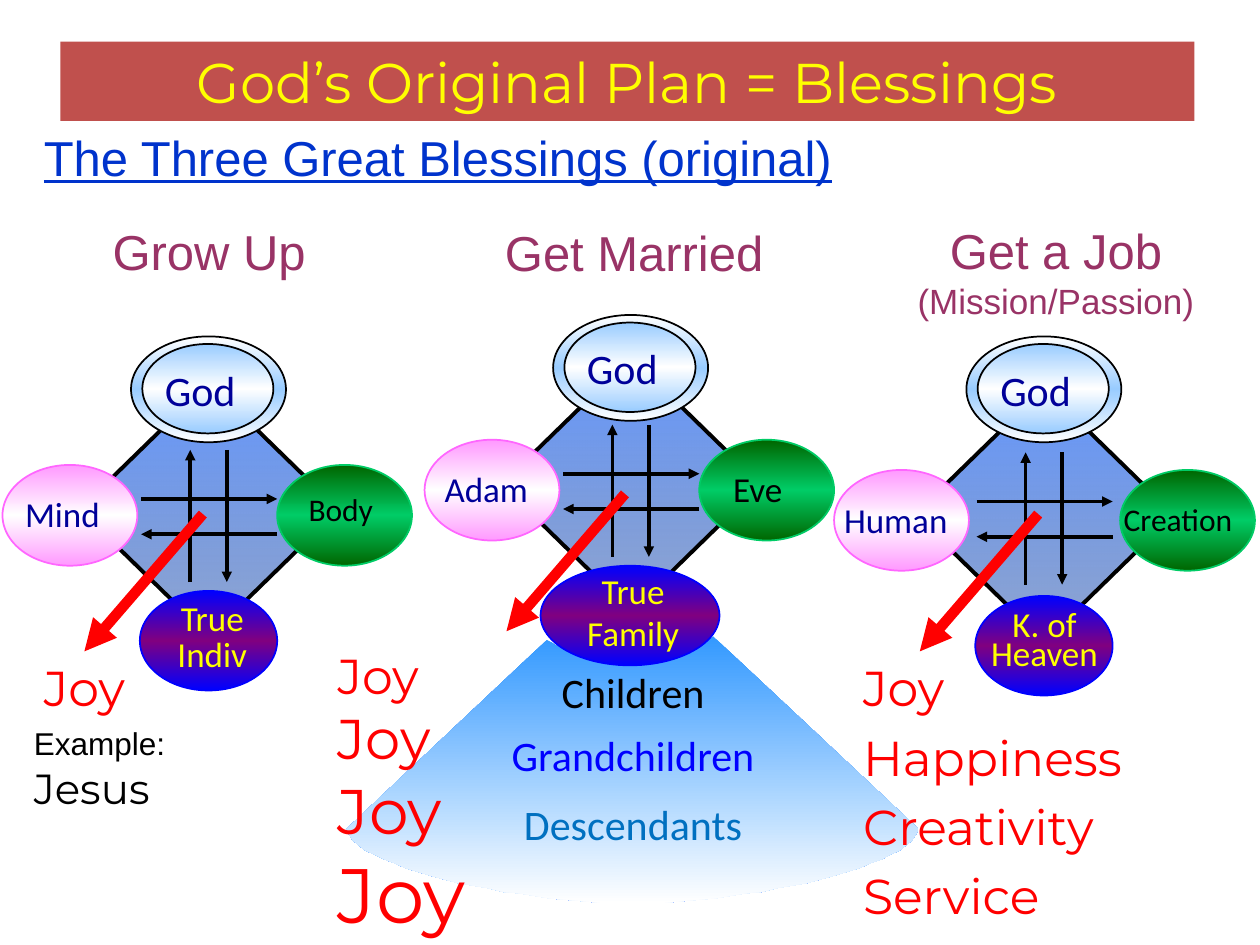
from lxml.etree import SubElement
from pptx import Presentation
from pptx.dml.color import RGBColor
from pptx.enum.shapes import MSO_CONNECTOR, MSO_SHAPE
from pptx.enum.text import MSO_ANCHOR, MSO_AUTO_SIZE, PP_ALIGN
from pptx.oxml.ns import qn
from pptx.util import Pt

PX = 9144  # 100 px to the inch

BLACK = RGBColor(0x00, 0x00, 0x00)
WHITE = RGBColor(0xFF, 0xFF, 0xFF)
RED = RGBColor(0xFF, 0x00, 0x00)
YELLOW = RGBColor(0xFF, 0xFF, 0x00)
BLUE = RGBColor(0x00, 0x00, 0xFF)
NAVY = RGBColor(0x00, 0x00, 0x99)
ROYAL = RGBColor(0x00, 0x33, 0xCC)
AZURE = RGBColor(0x00, 0x70, 0xC0)
SKY = RGBColor(0x33, 0x99, 0xFF)
PALE_BLUE = RGBColor(0x99, 0xCC, 0xFF)
CORNFLOWER = RGBColor(0x66, 0x99, 0xFF)
STEEL = RGBColor(0x49, 0x6D, 0xB6)
PURPLE = RGBColor(0x80, 0x00, 0x80)
PLUM = RGBColor(0x99, 0x33, 0x66)
PINK = RGBColor(0xFF, 0x99, 0xFF)
HOT_PINK = RGBColor(0xFF, 0x66, 0xFF)
DARK_GREEN = RGBColor(0x00, 0x66, 0x00)
GREEN = RGBColor(0x00, 0xCC, 0x66)
BRICK = RGBColor(0xC0, 0x50, 0x4D)

CENTER = {"alignment": PP_ALIGN.CENTER}


def font(name, size, color, **extra):
    return {"name": name, "size": Pt(size), "color": color, **extra}


def joy(size=28):
    return font("Montserrat", size, RED)


def label(size, color):
    return font("Calibri", size, color)


HEADING = font("Arial", 28, PLUM)


def bezier(p0, p1, p2, p3, steps=24):
    """Points along a cubic curve, without its start."""
    points = []
    for i in range(1, steps + 1):
        t = i / steps
        weights = ((1 - t) ** 3, 3 * t * (1 - t) ** 2, 3 * t * t * (1 - t), t ** 3)
        points.append(tuple(sum(w * p[axis] for w, p in zip(weights, (p0, p1, p2, p3)))
                            for axis in (0, 1)))
    return points


class Deck:
    """The presentation, its current slide and the drawing style."""

    def __init__(self):
        self.prs = Presentation()
        self.prs.slide_width, self.prs.slide_height = 1000 * PX, 750 * PX
        self.s = self.prs.slides.add_slide(self.prs.slide_layouts[3])

    def fill_text(self, sp, paragraphs, **para_format):
        """Each paragraph is a list of (text, font) runs."""
        tf = sp.text_frame
        tf.word_wrap, tf.auto_size = True, MSO_AUTO_SIZE.NONE
        for i, runs in enumerate(paragraphs):
            p = tf.paragraphs[0] if i == 0 else tf.add_paragraph()
            values = dict(para_format)
            if sp.is_placeholder:
                pPr = p._p.get_or_add_pPr()
                pPr.set("marL", "0")
                pPr.set("indent", "0")
                SubElement(pPr, qn("a:buNone"))
                values.setdefault("space_before", Pt(0))
            if i == 0 and "space_before" in values:
                values["space_before"] = Pt(0)
            for key, value in values.items():
                setattr(p, key, value)
            for text, style in runs:
                r = p.add_run()
                r.text = text
                for key, value in style.items():
                    if key == "color":
                        r.font.color.rgb = value
                    else:
                        setattr(r.font, key, value)

    def text(self, x, y, w, h, *paragraphs, **para_format):
        sp = self.s.shapes.add_textbox(x * PX, y * PX, w * PX, h * PX)
        self.fill_text(sp, paragraphs, **para_format)

    def placeholder(self, idx, x, y, w, h, *paragraphs, **para_format):
        """Fills a template placeholder and brings it to the front."""
        sp = self.s.placeholders[idx]
        sp.left, sp.top, sp.width, sp.height = (v * PX for v in (x, y, w, h))
        self.fill_text(sp, paragraphs, **para_format)
        sp._element.getparent().append(sp._element)
        return sp

    def gradient(self, sp, colors, end_alpha=100):
        """Even colour stops from top to bottom."""
        sp.shadow.inherit = False
        sp.fill.gradient()
        sp.fill.gradient_angle = 270
        stops = sp._element.spPr.find(".//" + qn("a:gsLst"))
        for stop in list(stops):
            stops.remove(stop)
        for i, color in enumerate(colors):
            pos = 100000 * i // (len(colors) - 1)
            gs = SubElement(stops, qn("a:gs"), pos=str(pos))
            clr = SubElement(gs, qn("a:srgbClr"), val=str(color))
        if end_alpha < 100:
            SubElement(clr, qn("a:alpha"), val=str(end_alpha * 1000))

    def shape(self, kind, x, y, w, h, colors, line, width=1, end_alpha=100):
        sp = self.s.shapes.add_shape(kind, x * PX, y * PX, w * PX, h * PX)
        self.gradient(sp, colors, end_alpha)
        sp.line.color.rgb = line
        sp.line.width = Pt(width)

    def ellipse(self, x, y, w, h, edge, middle, line):
        self.shape(MSO_SHAPE.OVAL, x, y, w, h, (edge, middle, edge), line)

    def arrow(self, x1, y1, x2, y2, color=BLACK, width=2):
        sp = self.s.shapes.add_connector(
            MSO_CONNECTOR.STRAIGHT, x1 * PX, y1 * PX, x2 * PX, y2 * PX)
        sp.line.color.rgb = color
        sp.line.width = Pt(width)
        SubElement(sp.line._get_or_add_ln(), qn("a:tailEnd"), type="triangle")
        SubElement(sp._element.spPr, qn("a:effectLst"))

    def fan(self):
        start, right = (434, 508), (729, 658)
        points = bezier(start, (465, 526), (480, 526), (502, 526))
        points += bezier((502, 526), (524, 525), (539, 522), (566, 505)) + [right]
        points += bezier(right, (718, 693), (578, 717), (502, 717))
        points += bezier((502, 717), (427, 717), (286, 693), (275, 658))
        fb = self.s.shapes.build_freeform(*start, scale=PX)
        fb.add_line_segments(points, close=True)
        sp = fb.convert_to_shape()
        self.gradient(sp, (SKY, WHITE))
        sp.line.fill.background()

    def four_positions(self, x, y, god_y, cross_y, left_x, right_x, bottom_w, joy_y):
        """A diamond at x, y with its four ellipses, cross of arrows and joy arrow."""
        self.shape(MSO_SHAPE.DIAMOND, x, y, 206, 201, (CORNFLOWER, STEEL), BLACK, 2.25, 60)
        self.ellipse(x + 102 - bottom_w // 2, y + 165, bottom_w, 79, BLUE, PURPLE, BLUE)
        self.ellipse(left_x, y + 65, 107, 80, PINK, WHITE, HOT_PINK)
        self.ellipse(right_x, y + 65, 107, 80, DARK_GREEN, GREEN, GREEN)
        self.ellipse(x + 41, god_y, 123, 84, WHITE, PALE_BLUE, BLACK)
        self.ellipse(x + 50, god_y + 6, 104, 71, PALE_BLUE, WHITE, BLACK)
        self.text(x + 58, god_y + 17, 89, 50, [("God", label(24, NAVY))])
        self.arrow(x + 88, cross_y + 105, x + 88, cross_y)
        self.arrow(x + 117, cross_y, x + 117, cross_y + 105)
        self.arrow(x + 49, cross_y + 39, x + 157, cross_y + 39)
        self.arrow(x + 157, cross_y + 67, x + 49, cross_y + 67)
        self.arrow(x + 98, joy_y, x + 4, joy_y + 109, RED, 6)


def main():
    deck = Deck()
    title = deck.placeholder(
        0, 48, 33, 900, 63,
        [("God’s Original Plan = Blessings", font("Montserrat", 32, YELLOW))], **CENTER)
    title.fill.solid()
    title.fill.fore_color.rgb = BRICK
    title.text_frame.vertical_anchor = MSO_ANCHOR.MIDDLE

    deck.text(25, 96, 725, 57, [("The Three Great Blessings (original)",
                                 font("Arial", 28, ROYAL, underline=True))])
    deck.text(41, 171, 250, 57, [("Grow Up", HEADING)], **CENTER)
    deck.text(391, 172, 244, 57, [("Get Married", HEADING)])
    deck.text(687, 170, 302, 91, [("Get a Job ", HEADING),
                                  ("(Mission/Passion)", font("Arial", 20, PLUM))], **CENTER)

    deck.fan()
    for name, y, color in (("Children", 524, BLACK), ("Grandchildren", 574, BLUE),
                           ("Descendants", 629, AZURE)):
        deck.text(379, y, 247, 51, [(name, label(24, color))], **CENTER)

    deck.four_positions(398, 284, 250, 337, 337, 555, 142, 392)
    deck.four_positions(726, 308, 267, 359, 662, 889, 109, 408)
    deck.four_positions(63, 304, 267, 357, 2, 220, 109, 408)

    for name, x, y, w, size, color in (
            ("Adam", 343, 366, 97, 20, NAVY), ("Eve", 572, 366, 72, 20, BLACK),
            ("Human", 660, 391, 125, 20, NAVY), ("Creation", 882, 392, 141, 18, BLACK),
            ("Mind", 10, 386, 99, 20, NAVY), ("Body", 235, 384, 85, 18, BLACK)):
        deck.text(x, y, w, 43, [(name, label(size, color))])

    goal = label(20, YELLOW)
    deck.text(444, 447, 117, 77, [("True Family", goal)], **CENTER)
    deck.text(766, 482, 126, 58, [("K. of Heaven", goal)], line_spacing=0.7, **CENTER)
    deck.text(121, 474, 95, 67, [("True", goal)], [("Indiv", goal)],
              line_spacing=0.85, **CENTER)

    deck.text(25, 517, 100, 57, [("Joy", joy())])
    deck.placeholder(1, 258, 507, 175, 243,
                     *[[("Joy", joy(size))] for size in (28, 32, 36, 44)])
    deck.placeholder(2, 675, 517, 275, 224,
                     *[[(word, joy())] for word in ("Joy", "Happiness", "Creativity", "Service")],
                     space_before=Pt(6))
    deck.text(17, 570, 154, 81, [("Example:", font("Arial", 18, BLACK))],
              [("Jesus", font("Montserrat", 24, BLACK))])
    deck.prs.save("out.pptx")


if __name__ == "__main__":
    main()
